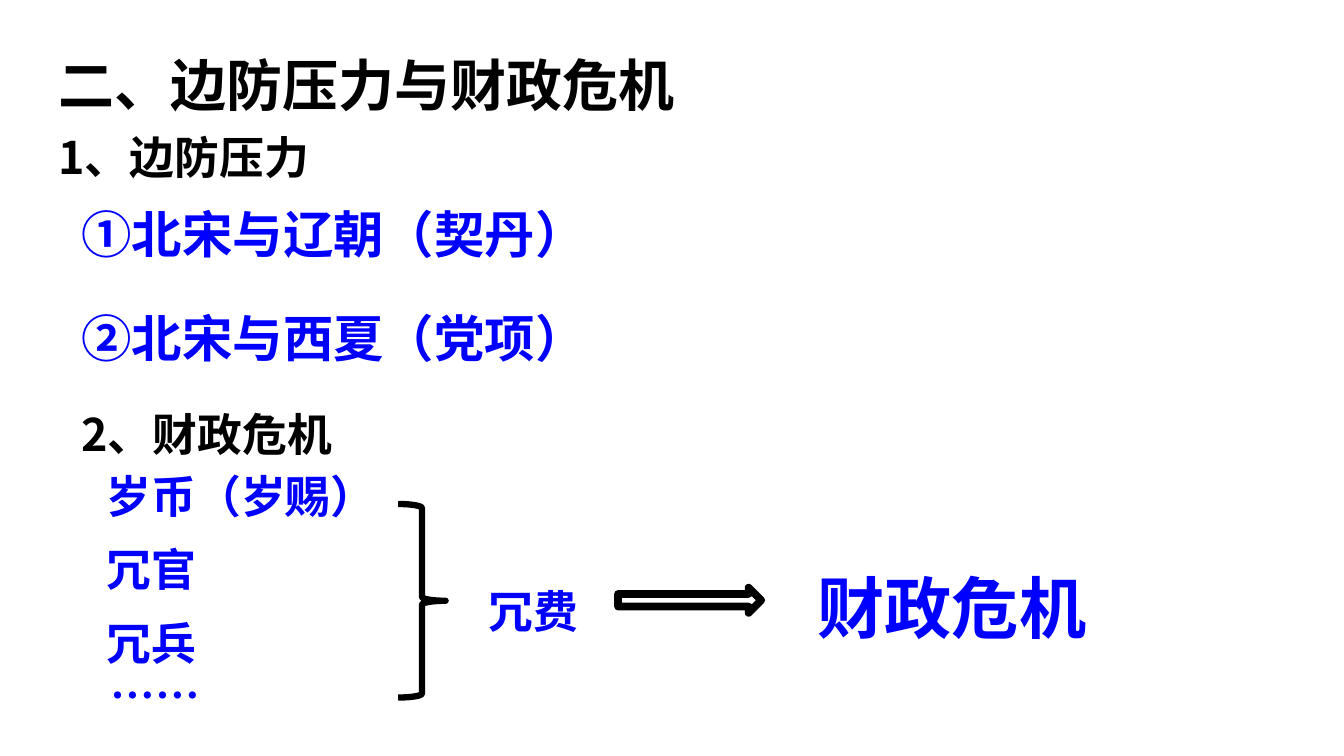
"""Build the slide on frontier pressure and fiscal crisis in the Northern Song."""
import lxml.etree
import pptx
import pptx.dml.color
import pptx.enum.shapes
import pptx.enum.text
import pptx.oxml.ns
import pptx.util
from pptx.util import Inches

FONT = "Noto Sans CJK SC"
COLORS = {"heading": "000000", "point": "0000FF", "line": "000000"}

TITLE = ("二、边防压力与财政危机", 0.48, 0.25, 7.5, 0.89)
HEADINGS = [
    ("1、边防压力", 0.48, 1.08),
    ("2、财政危机", 0.71, 3.83),
]
RIVALS = ["①北宋与辽朝（契丹）", "②北宋与西夏（党项）"]
BURDENS = ["岁币（岁赐）", "冗官", "冗兵"]
ELLIPSIS = ("……", 1, 6.58, 1.63, 0.54)
EXPENSE = ("冗费", 4.75, 5.58, 1.63, 0.73)
CRISIS = ("财政危机", 8.01, 5.33, 3.25, 1.05)

RIVAL_TOP, RIVAL_STEP = 1.97, 1.03
BURDEN_TOP, BURDEN_STEP = 4.6, 0.73

SHAPE = pptx.enum.shapes.MSO_SHAPE
SYMBOLS = [
    (SHAPE.RIGHT_BRACE, 3.95, 5, 0.47, 1.92, 4.5),
    (SHAPE.RIGHT_ARROW, 6.13, 5.83, 1.42, 0.25, 5.5),
]


def rgb(name):
    return pptx.dml.color.RGBColor.from_string(COLORS[name])


def write(shape, text, size, color, spacing=1.0, wrap=True):
    frame = shape.text_frame
    frame.text = text
    frame.word_wrap = wrap
    frame.auto_size = pptx.enum.text.MSO_AUTO_SIZE.NONE
    frame.vertical_anchor = pptx.enum.text.MSO_ANCHOR.TOP
    paragraph = frame.paragraphs[0]
    paragraph.alignment = pptx.enum.text.PP_ALIGN.LEFT
    paragraph.line_spacing = spacing
    paragraph.space_before = pptx.util.Pt(0)
    font = paragraph.runs[0].font
    font.name = FONT
    font.size = pptx.util.Pt(size)
    font.bold = True
    font.color.rgb = rgb(color)
    properties = paragraph.runs[0]._r.get_or_add_rPr()
    east_asian = lxml.etree.SubElement(properties, pptx.oxml.ns.qn("a:ea"))
    east_asian.set("typeface", FONT)


def add_text(slide, text, left, top, width, height, *style, **options):
    box = slide.shapes.add_textbox(*map(Inches, (left, top, width, height)))
    write(box, text, *style, **options)


def add_symbol(slide, kind, left, top, width, height, weight):
    shape = slide.shapes.add_shape(kind, *map(Inches, (left, top, width, height)))
    shape.shadow.inherit = False
    shape.fill.background()
    shape.line.color.rgb = rgb("line")
    shape.line.width = pptx.util.Pt(weight)


def main():
    presentation = pptx.Presentation()
    presentation.slide_width = Inches(13.33)
    presentation.slide_height = Inches(7.5)
    slide = presentation.slides.add_slide(presentation.slide_layouts.get_by_name("Title Only"))

    text, *place = TITLE
    title = slide.shapes.title
    title.left, title.top, title.width, title.height = map(Inches, place)
    write(title, text, 40, "heading", 1.3)

    for text, left, top in HEADINGS:
        add_text(slide, text, left, top, 5.39, 0.73, 32, "heading", 1.3)
    for index, text in enumerate(RIVALS):
        top = RIVAL_TOP + index * RIVAL_STEP
        add_text(slide, text, 0.71, top, 5.27, 0.71, 36, "point", wrap=False)
    for index, text in enumerate(BURDENS):
        top = BURDEN_TOP + index * BURDEN_STEP
        add_text(slide, text, 0.96, top, 3, 0.64, 32, "point")
    add_text(slide, *ELLIPSIS, 32, "point")
    add_text(slide, *EXPENSE, 32, "point", 1.3)
    add_text(slide, *CRISIS, 48, "point", 1.3)
    for symbol in SYMBOLS:
        add_symbol(slide, *symbol)

    presentation.save("out.pptx")


if __name__ == "__main__":
    main()
